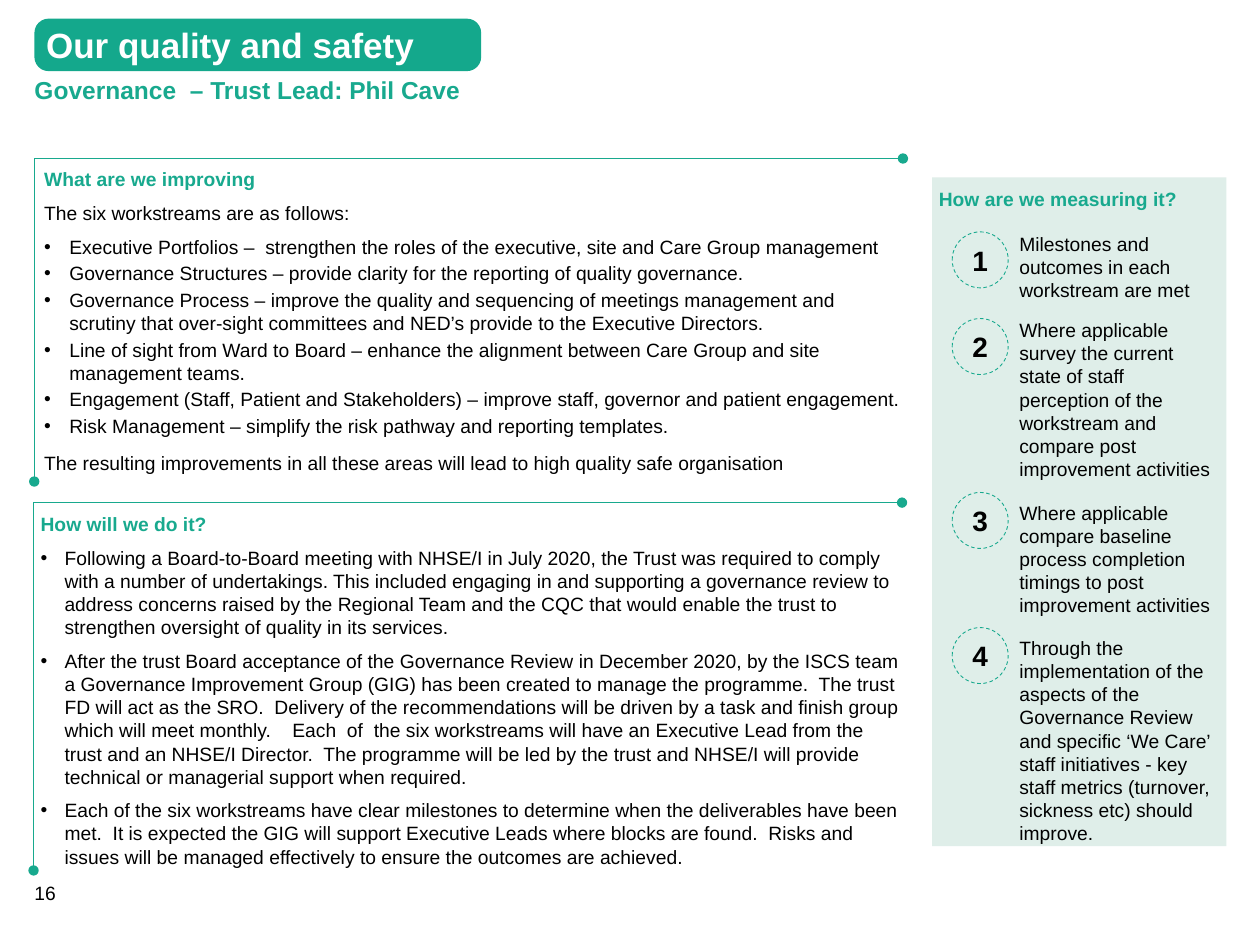
from dataclasses import dataclass

from lxml import etree
from pptx import Presentation
from pptx.dml.color import RGBColor
from pptx.enum.dml import MSO_LINE
from pptx.enum.shapes import MSO_SHAPE
from pptx.enum.text import MSO_ANCHOR, MSO_AUTO_SIZE, PP_ALIGN
from pptx.oxml.ns import qn
from pptx.util import Pt

RECTANGLE, ROUNDED, OVAL = MSO_SHAPE.RECTANGLE, MSO_SHAPE.ROUNDED_RECTANGLE, MSO_SHAPE.OVAL
TOP, MIDDLE = MSO_ANCHOR.TOP, MSO_ANCHOR.MIDDLE
LEFT, CENTER = PP_ALIGN.LEFT, PP_ALIGN.CENTER
NO_AUTOFIT = MSO_AUTO_SIZE.NONE
DASH = MSO_LINE.DASH


@dataclass(frozen=True)
class Theme:
    font: str = "Arial"
    banner: RGBColor = RGBColor(0x14, 0xA8, 0x8C)
    accent: RGBColor = RGBColor(0x18, 0xA9, 0x8E)
    panel: RGBColor = RGBColor(0xDF, 0xEE, 0xE9)
    ink: RGBColor = RGBColor(0, 0, 0)
    white: RGBColor = RGBColor(255, 255, 255)
    banner_size: int = 20
    number_size: int = 16
    title_size: int = 14
    body_size: int = 11


THEME = Theme()

BANNER = "Our quality and safety"
TITLE = "Governance  – Trust Lead: Phil Cave"
PAGE_NUMBER = "16"

HEADING = {"color": THEME.accent, "bold": True, "after": 6}
INTRO = {"after": 6}
WORKSTREAM = {"after": 2, "indent": 14.4}
CLOSING = {"before": 6}
ACTION = {"after": 6, "indent": 13.7}

IMPROVING = [
    ("What are we improving", HEADING),
    ("The six workstreams are as follows:", INTRO),
    ("Executive Portfolios –  strengthen the roles of the executive, site and Care Group management", WORKSTREAM),
    ("Governance Structures – provide clarity for the reporting of quality governance.", WORKSTREAM),
    ("Governance Process – improve the quality and sequencing of meetings management and scrutiny "
     "that over-sight committees and NED’s provide to the Executive Directors.", WORKSTREAM),
    ("Line of sight from Ward to Board – enhance the alignment between Care Group and site "
     "management teams.", WORKSTREAM),
    ("Engagement (Staff, Patient and Stakeholders) – improve staff, governor and patient engagement.", WORKSTREAM),
    ("Risk Management – simplify the risk pathway and reporting templates.", WORKSTREAM),
    ("The resulting improvements in all these areas will lead to high quality safe organisation", CLOSING),
]
DOING = [
    ("How will we do it?", HEADING),
    ("Following a Board-to-Board meeting with NHSE/I in July 2020, the Trust was required to comply "
     "with a number of undertakings. This included engaging in and supporting a governance review to "
     "address concerns raised by the Regional Team and the CQC that would enable the trust to "
     "strengthen oversight of quality in its services.", ACTION),
    ("After the trust Board acceptance of the Governance Review in December 2020, by the ISCS team "
     "a Governance Improvement Group (GIG) has been created to manage the programme.  The trust FD "
     "will act as the SRO.  Delivery of the recommendations will be driven by a task and finish group "
     "which will meet monthly.    Each  of  the six workstreams will have an Executive Lead from the "
     "trust and an NHSE/I Director.  The programme will be led by the trust and NHSE/I will provide "
     "technical or managerial support when required.", ACTION),
    ("Each of the six workstreams have clear milestones to determine when the deliverables have been "
     "met.  It is expected the GIG will support Executive Leads where blocks are found.  Risks and "
     "issues will be managed effectively to ensure the outcomes are achieved.", ACTION),
]
SECTIONS = [
    {"content": IMPROVING, "box": (25.2, 95.8, 492.5, 177.1), "frame": (19.6, 90.6, 516, 275.2)},
    {"content": DOING, "box": (23.2, 293, 492.5, 223.9), "frame": (19.2, 287.2, 515.5, 497.4)},
]

MEASURING = "How are we measuring it?"
MEASURES = [
    {"top": 132.5, "drop": 0, "lines": 3, "text": "Milestones and outcomes in each workstream are met"},
    {"top": 182, "drop": 0, "lines": 7, "text": "Where applicable survey the current state of staff "
     "perception of the workstream and compare post improvement activities"},
    {"top": 281.4, "drop": 5, "lines": 5, "text": "Where applicable compare baseline process completion "
     "timings to post improvement activities"},
    {"top": 358.6, "drop": 5, "lines": 9, "text": "Through the implementation of the aspects of the "
     "Governance Review and specific ‘We Care’ staff initiatives - key staff metrics (turnover, "
     "sickness etc) should improve."},
]
CIRCLE_LEFT, CIRCLE_SIZE = 544.1, 32
MEASURE_LEFT, MEASURE_WIDTH, MEASURE_LINE = 582.5, 110.2, 13.3


def set_all(target, values):
    for key, value in values.items():
        setattr(target, key, value)


def place(item, box):
    set_all(item, dict(zip(("left", "top", "width", "height"), map(Pt, box))))


def set_bullet(paragraph, indent):
    properties = paragraph._p.get_or_add_pPr()
    properties.set("marL", str(Pt(indent)))
    properties.set("indent", str(-Pt(indent)))
    if indent:
        etree.SubElement(properties, qn("a:buFont"), typeface=THEME.font)
        etree.SubElement(properties, qn("a:buChar"), char="•")
    else:
        etree.SubElement(properties, qn("a:buNone"))


def write(item, content, size=THEME.body_size, anchor=TOP, align=LEFT, inset=(0, 0)):
    frame = item.text_frame
    side, edge = map(Pt, inset)
    set_all(frame, {"word_wrap": True, "auto_size": NO_AUTOFIT, "vertical_anchor": anchor,
                    "margin_left": side, "margin_right": side, "margin_top": edge, "margin_bottom": edge})
    for index, (text, style) in enumerate(content):
        paragraph = frame.add_paragraph() if index else frame.paragraphs[0]
        set_bullet(paragraph, style.get("indent", 0))
        set_all(paragraph, {"alignment": align, "line_spacing": 1.0,
                            "space_before": Pt(style.get("before", 0)),
                            "space_after": Pt(style.get("after", 0))})
        run = paragraph.add_run()
        run.text = text
        set_all(run.font, {"name": THEME.font, "size": Pt(size), "bold": style.get("bold", False)})
        run.font.color.rgb = style.get("color", THEME.ink)


def add_block(shapes, kind, box, fill):
    block = shapes.add_shape(kind, *map(Pt, box))
    block.shadow.inherit = False
    block.fill.solid()
    block.fill.fore_color.rgb = fill
    block.line.fill.background()
    return block


def set_outline(item, **values):
    item.line.color.rgb = THEME.accent
    set_all(item.line, {"width": Pt(0.5), **values})


def add_frame(shapes, left, top, right, bottom):
    builder = shapes.build_freeform(Pt(left), Pt(bottom))
    builder.add_line_segments([(Pt(left), Pt(top)), (Pt(right), Pt(top))], close=False)
    frame = builder.convert_to_shape()
    frame.shadow.inherit = False
    frame.fill.background()
    set_outline(frame)
    for end in ("a:headEnd", "a:tailEnd"):
        etree.SubElement(frame.line._get_or_add_ln(), qn(end), type="oval")


def add_measure(shapes, number, measure):
    group = shapes.add_group_shape().shapes
    circle = add_block(group, OVAL, (CIRCLE_LEFT, measure["top"], CIRCLE_SIZE, CIRCLE_SIZE), THEME.panel)
    set_outline(circle, dash_style=DASH)
    write(circle, [(str(number), {"bold": True})], THEME.number_size, MIDDLE, CENTER)
    box = (MEASURE_LEFT, measure["top"] + measure["drop"], MEASURE_WIDTH, measure["lines"] * MEASURE_LINE)
    write(add_block(group, RECTANGLE, box, THEME.panel), [(measure["text"], {"after": 6})])


def main():
    deck = Presentation()
    set_all(deck, {"slide_width": Pt(720), "slide_height": Pt(540)})
    slide = deck.slides.add_slide(deck.slide_layouts[3])
    shapes = slide.shapes

    title, *bodies = slide.placeholders
    place(title, (19.7, 42.5, 520, 17.3))
    write(title, [(TITLE, {"color": THEME.accent, "bold": True})], THEME.title_size, MIDDLE)

    banner = add_block(shapes, ROUNDED, (19.7, 10.7, 255.3, 30), THEME.banner)
    banner.adjustments[0] = 0.27
    write(banner, [(BANNER, {"color": THEME.white, "bold": True})], THEME.banner_size, MIDDLE, inset=(4.3, 4.3))

    for body, section in zip(bodies, SECTIONS):
        place(body, section["box"])
        write(body, section["content"])
        add_frame(shapes, *section["frame"])

    add_block(shapes, RECTANGLE, (532.6, 101.4, 168.2, 382.2), THEME.panel)
    measuring = shapes.add_textbox(*map(Pt, (529.4, 103.4, 156.2, 20.9)))
    write(measuring, [(MEASURING, {"color": THEME.accent, "bold": True})], inset=(7.2, 3.6))
    for number, measure in enumerate(MEASURES, 1):
        add_measure(shapes, number, measure)

    page_number = shapes.add_textbox(*map(Pt, (19.7, 503.3, 39.6, 13.7)))
    write(page_number, [(PAGE_NUMBER, {})])
    deck.save("out.pptx")


if __name__ == "__main__":
    main()
